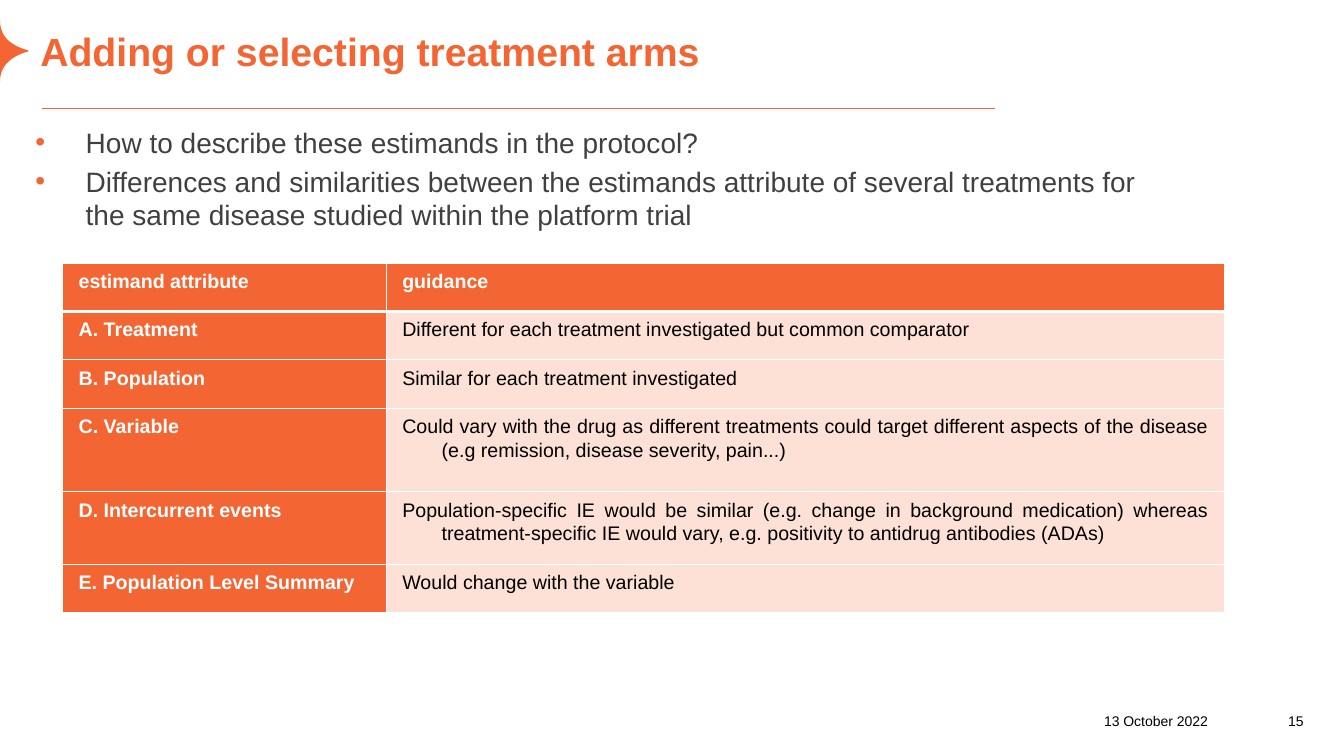
from dataclasses import dataclass

from lxml import etree
from pptx import Presentation, util as u
from pptx.dml.color import RGBColor
from pptx.enum import shapes, text
from pptx.oxml import ns


@dataclass(frozen=True)
class Theme:
    font: str = "Arial"
    accent: str = "F36633"
    tint: str = "FDE0D6"
    body: str = "404040"
    black: str = "000000"
    white: str = "FFFFFF"
    title_size: int = 28
    body_size: int = 20
    table_size: int = 14
    footer_size: int = 10


T = Theme()
EMU_PER_PX = 9144  # 100 px to the inch

BULLETS = [
    "How to describe these estimands in the protocol?",
    "Differences and similarities between the estimands attribute of several treatments for "
    "the same disease studied within the platform trial",
]
ESTIMANDS = [
    ("estimand attribute", "guidance"),
    ("A. Treatment", "Different for each treatment investigated but common comparator"),
    ("B. Population", "Similar for each treatment investigated"),
    ("C. Variable", "Could vary with the drug as different treatments could target different "
     "aspects of the disease (e.g remission, disease severity, pain...)"),
    ("D. Intercurrent events", "Population-specific IE would be similar (e.g. change in "
     "background medication) whereas treatment-specific IE would vary, e.g. positivity to "
     "antidrug antibodies (ADAs)"),
    ("E. Population Level Summary", "Would change with the variable"),
]
COL_WIDTHS = [321, 832]
ROW_HEIGHTS = [48, 48, 48, 83, 72, 48]
JUSTIFIED_ROWS = (3, 4)


def px(n):
    return u.Emu(round(n * EMU_PER_PX))


def rgb(color):
    return RGBColor.from_string(color)


def sub(parent, tag, **attrs):
    return etree.SubElement(parent, ns.qn(tag), attrs)


def place(sp, left, top, width, height):
    sp.left, sp.top, sp.width, sp.height = map(px, (left, top, width, height))


def set_margins(box, left=0, top=0, right=0, bottom=0):
    box.margin_left, box.margin_top = px(left), px(top)
    box.margin_right, box.margin_bottom = px(right), px(bottom)


def write(p, words, *, size, color, bold=False, align=text.PP_ALIGN.LEFT,
          hang=0, bullet=None, before=0, after=0, spacing=1.0):
    """Fill a paragraph; hang is the hanging indent in px."""
    pPr = p._p.get_or_add_pPr()
    pPr.set("marL", str(px(hang)))
    pPr.set("indent", str(-px(hang)))
    if bullet:
        sub(sub(pPr, "a:buClr"), "a:srgbClr", val=T.accent)
        sub(pPr, "a:buChar", char=bullet)
    p.alignment, p.line_spacing = align, spacing
    p.space_before, p.space_after = u.Pt(before), u.Pt(after)
    r = p.add_run()
    r.text = words
    r.font.name, r.font.size, r.font.bold = T.font, u.Pt(size), bold
    r.font.color.rgb = rgb(color)


def add_star(s):
    """Half of a four-pointed star at the left edge, with curved sides."""
    upper = [(0, 20), (0, 36), (10, 45), (28, 50)]
    lower = [(28, 51), (10, 56), (0, 66), (0, 81)]

    def curve(points, steps=16):
        for i in range(steps + 1):
            t = i / steps
            weights = ((1 - t) ** 3, 3 * t * (1 - t) ** 2, 3 * t * t * (1 - t), t ** 3)
            yield tuple(px(sum(w * pt[axis] for w, pt in zip(weights, points)))
                        for axis in (0, 1))

    outline = [*curve(upper), *curve(lower)]
    builder = s.shapes.build_freeform(*outline[0], scale=1.0)
    builder.add_line_segments(outline[1:], close=True)
    sp = builder.convert_to_shape()
    sp.shadow.inherit = False
    sp.fill.solid()
    sp.fill.fore_color.rgb = rgb(T.accent)
    sp.line.fill.background()


def add_rule(s, x1, x2, y):
    line = s.shapes.add_connector(shapes.MSO_CONNECTOR.STRAIGHT, px(x1), px(y), px(x2), px(y))
    line.line.color.rgb = rgb(T.accent)
    line.line.width = u.Pt(0.75)
    sub(line._element.spPr, "a:effectLst")


def add_footer(s, words, left, width):
    tf = s.shapes.add_textbox(px(left), px(694), px(width), px(30)).text_frame
    tf.word_wrap = True
    tf.vertical_anchor = text.MSO_ANCHOR.BOTTOM
    set_margins(tf)
    write(tf.paragraphs[0], words, size=T.footer_size, color=T.black, align=text.PP_ALIGN.RIGHT)


def fill_title(sp, words):
    place(sp, 40, 27, 1253, 47)
    tf = sp.text_frame
    tf.auto_size = text.MSO_AUTO_SIZE.NONE
    tf.vertical_anchor = text.MSO_ANCHOR.BOTTOM
    set_margins(tf)
    write(tf.paragraphs[0], words, size=T.title_size, color=T.accent, bold=True)


def fill_bullets(sp, items):
    place(sp, 25, 119, 1154, 594)
    tf = sp.text_frame
    tf.auto_size = text.MSO_AUTO_SIZE.NONE
    for i, item in enumerate(items):
        p = tf.add_paragraph() if i else tf.paragraphs[0]
        write(p, item, size=T.body_size, color=T.body, hang=50, bullet="•",
              before=4 if i else 0)


def set_borders(cell, **widths):
    """Draw white cell borders; widths in points by side: L, R, T, B."""
    tcPr = cell._tc.get_or_add_tcPr()
    for side, width in widths.items():
        ln = sub(tcPr, f"a:ln{side}", w=str(u.Pt(width)))
        sub(sub(ln, "a:solidFill"), "a:srgbClr", val=T.white)


def add_estimand_table(s):
    tbl = s.shapes.add_table(len(ESTIMANDS), len(COL_WIDTHS), px(62), px(261),
                             px(sum(COL_WIDTHS)), px(sum(ROW_HEIGHTS))).table
    for col, width in zip(tbl.columns, COL_WIDTHS):
        col.width = px(width)
    for i, (row, height) in enumerate(zip(tbl.rows, ROW_HEIGHTS)):
        row.height = px(height)
        for j, words in enumerate(ESTIMANDS[i]):
            cell = tbl.cell(i, j)
            heading = i == 0 or j == 0
            justified = j == 1 and i in JUSTIFIED_ROWS
            set_borders(cell, L=1, R=1, T=3 if i == 1 else 1, B=3 if i == 0 else 1)
            cell.fill.solid()
            cell.fill.fore_color.rgb = rgb(T.accent if heading else T.tint)
            set_margins(cell, left=16, top=6, right=16)
            write(cell.text_frame.paragraphs[0], words, size=T.table_size, bold=heading,
                  color=T.white if heading else T.black, hang=39, after=5.3, spacing=1.07,
                  align=text.PP_ALIGN.JUSTIFY if justified else text.PP_ALIGN.LEFT)


def main():
    prs = Presentation()
    prs.slide_width, prs.slide_height = px(1333), px(750)
    s = prs.slides.add_slide(prs.slide_layouts[1])
    add_star(s)
    add_footer(s, "13 October 2022", left=894, width=304)
    add_footer(s, "15", left=1234, width=59)
    fill_title(s.shapes.title, "Adding or selecting treatment arms")
    add_rule(s, 42, 987, 108)
    fill_bullets(s.placeholders[1], BULLETS)
    add_estimand_table(s)
    prs.save("out.pptx")


if __name__ == "__main__":
    main()
